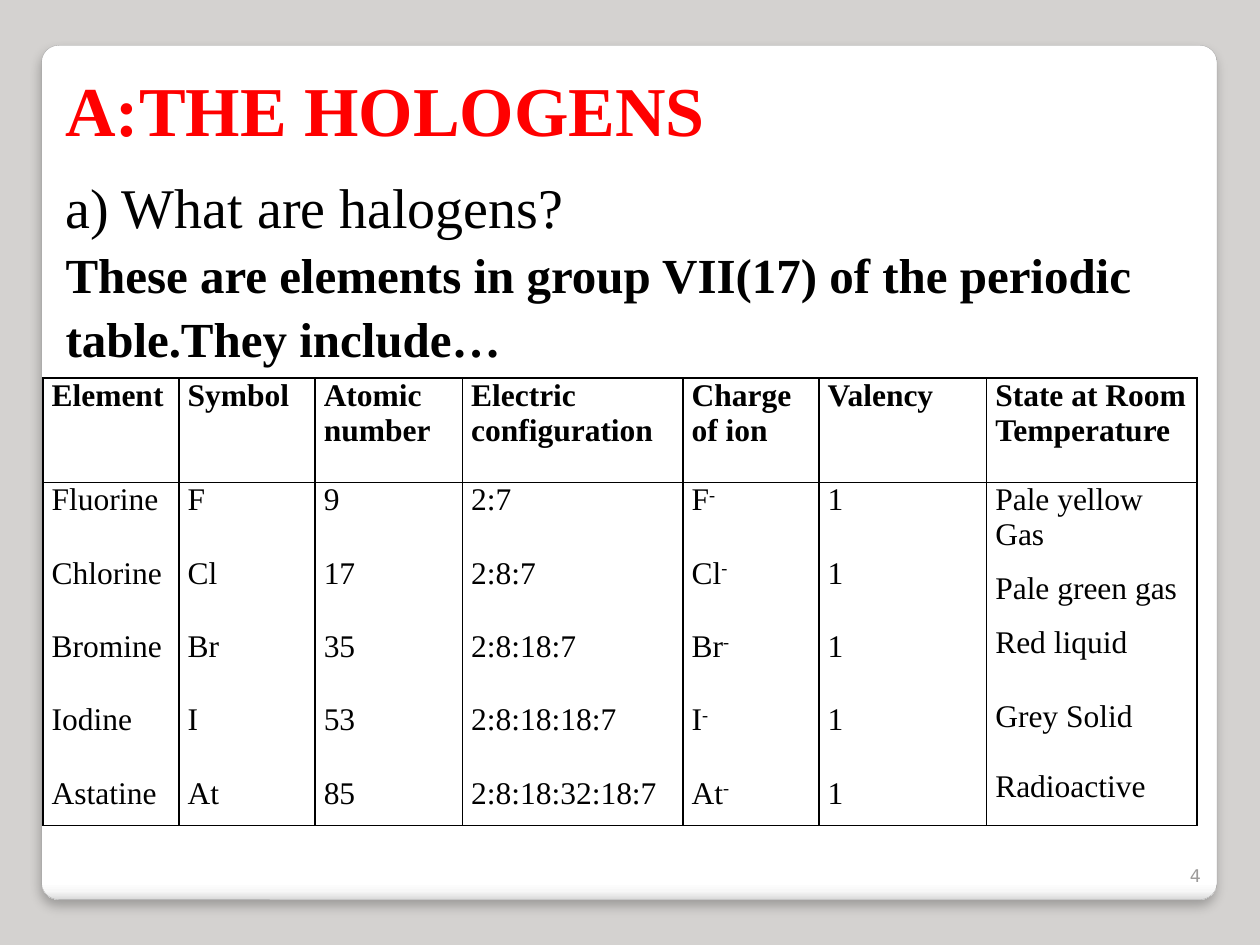
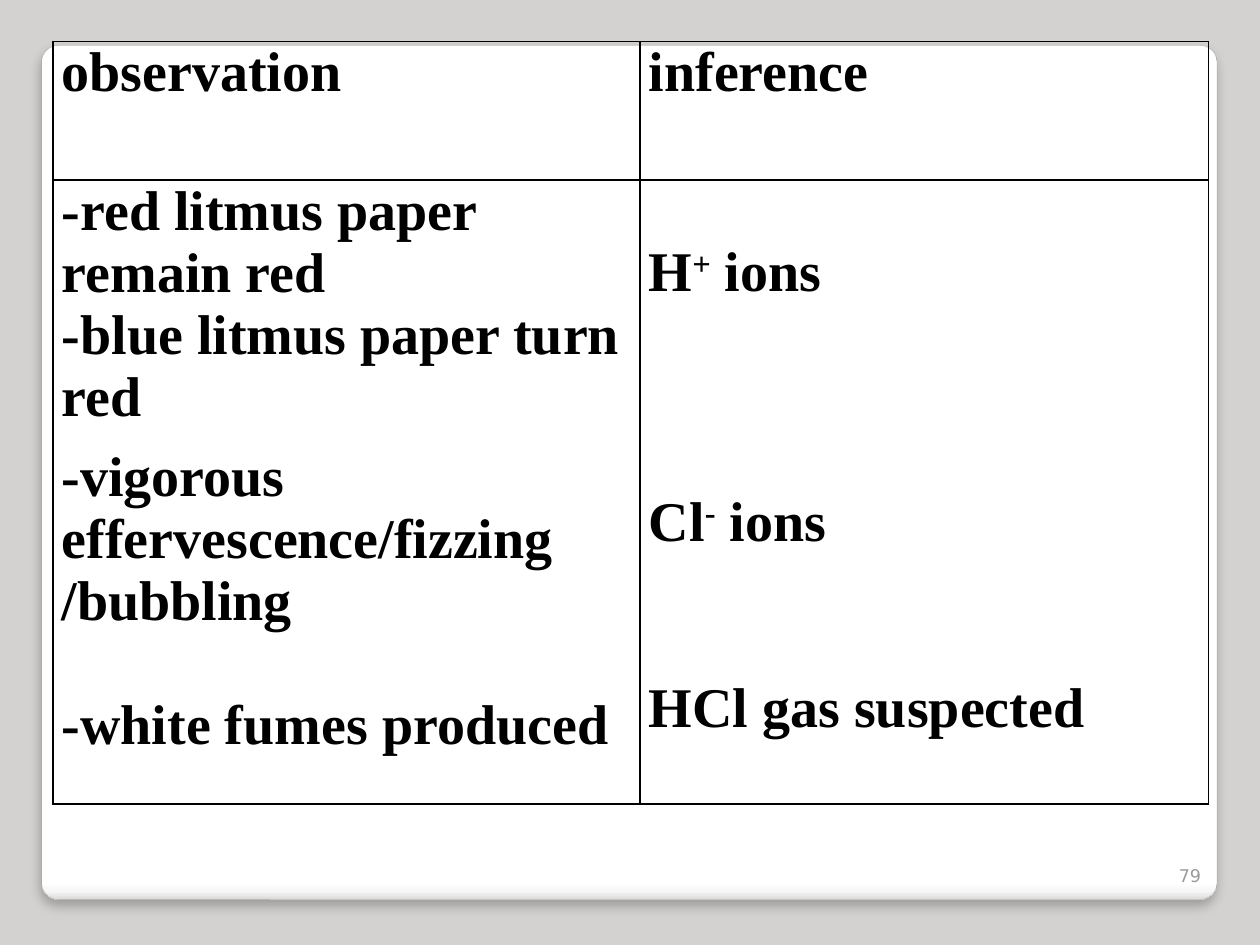
from lxml import etree
from pptx import Presentation
from pptx.dml.color import RGBColor
from pptx.enum.shapes import MSO_SHAPE
from pptx.enum.text import MSO_ANCHOR, MSO_AUTO_SIZE, PP_ALIGN
from pptx.oxml import parse_xml
from pptx.oxml.ns import nsdecls, qn
from pptx.util import Inches, Pt

ROUNDED = MSO_SHAPE.ROUNDED_RECTANGLE
TOP, BOTTOM = MSO_ANCHOR.TOP, MSO_ANCHOR.BOTTOM
LEFT, RIGHT = PP_ALIGN.LEFT, PP_ALIGN.RIGHT
NO_AUTOFIT = MSO_AUTO_SIZE.NONE
TITLE_AND_CONTENT, BLANK = 1, 6

SERIF, SANS = "Times New Roman", "DejaVu Sans"
BLACK, RED, GREY = "000000", "FF0000", "9D9B9A"
BACKDROP, CARD_EDGE = "D4D2D0", "A4A4A4"
CARD_STOPS = [(0, "FFFFFF"), (98, "FFFFFF"), (99, "F7F7F7"), (100, "DADADA")]
TITLE_SPACING = 1.09

# Text between carets is superscript. A paragraph is (text, points before it).
TITLE = "A:THE HOLOGENS"
INTRO = [
    ("a) What are halogens?", 32, False),
    ("These are elements in group VII(17) of the periodic table.They include…", 28, True),
]
HALOGEN_HEADS = ["Element", "Symbol", "Atomic number", "Electric configuration",
                 "Charge of ion", "Valency", "State at Room Temperature"]
HALOGENS = [
    ("Fluorine", "F", "9", "2:7", "F^-^", "1"),
    ("Chlorine", "Cl", "17", "2:8:7", "Cl^-^", "1"),
    ("Bromine", "Br", "35", "2:8:18:7", "Br^-^", "1"),
    ("Iodine", "I", "53", "2:8:18:18:7", "I^-^", "1"),
    ("Astatine", "At", "85", "2:8:18:32:18:7", "At^-^", "1"),
]
HALOGEN_GAP = 22
STATES = [("Pale yellow", 0), ("Gas", 0), ("Pale green gas", 11),
          ("Red liquid", 11), ("Grey Solid", 22), ("Radioactive", 20.5)]
TEST_HEADS = ["observation", "inference"]
OBSERVATIONS = [("-red litmus paper remain red", 0), ("-blue litmus paper turn red", 0),
                ("-vigorous effervescence/fizzing", 10), ("/bubbling", 0),
                ("-white fumes produced", 35)]
INFERENCES = [("H^+^ ions", 0), ("Cl^-^ ions", 107), ("HCl gas suspected", 71)]
INFERENCE_TOP = 0.49


def rgb(hex_colour):
    return RGBColor.from_string(hex_colour)


def box(*lengths):
    return [Inches(n) for n in lengths]


def add_run(p, text, size, bold=False, colour=BLACK, font=SERIF):
    r = p.add_run()
    r.text = text
    r.font.name, r.font.size, r.font.bold = font, Pt(size), bold
    r.font.color.rgb = rgb(colour)
    return r


def write_paragraphs(tf, paragraphs, size, bold):
    for i, (text, gap) in enumerate(paragraphs):
        p = tf.add_paragraph() if i else tf.paragraphs[0]
        if gap:
            p.space_before = Pt(gap)
        for j, part in enumerate(text.split("^")):
            if part:
                r = add_run(p, part, size, bold)
                if j % 2:
                    r.font._element.set("baseline", "30000")


def add_card(s):
    """Draw the white rounded panel, behind everything else on the slide."""
    sp = s.shapes.add_shape(ROUNDED, *box(0.33, 0.36, 9.33, 6.78))
    s.shapes._spTree.insert(2, sp._element)
    sp.adjustments[0] = 0.02
    sp.line.color.rgb = rgb(CARD_EDGE)
    sp.line.width = Pt(0.16)
    sp.fill.gradient()
    sp.fill.gradient_angle = 270
    stops = sp._element.spPr.find(qn("a:gradFill")).find(qn("a:gsLst"))
    for stop in list(stops):
        stops.remove(stop)
    for percent, colour in CARD_STOPS:
        stop = etree.SubElement(stops, qn("a:gs"), pos=str(percent * 1000))
        etree.SubElement(stop, qn("a:srgbClr"), val=colour)
    sp._element.spPr.append(parse_xml(
        f'<a:effectLst {nsdecls("a")}><a:outerShdw blurRad="{Pt(6)}" dist="{Pt(4)}" '
        'dir="5400000" algn="t" rotWithShape="0"><a:srgbClr val="000000">'
        '<a:alpha val="25000"/></a:srgbClr></a:outerShdw></a:effectLst>'))


def add_page_number(s, number):
    tf = s.shapes.add_textbox(*box(9.13, 6.68, 0.5, 0.4)).text_frame
    tf.word_wrap = True
    tf.vertical_anchor = BOTTOM
    p = tf.paragraphs[0]
    p.alignment = RIGHT
    add_run(p, str(number), 10, colour=GREY, font=SANS)


def new_slide(prs, layout, number):
    s = prs.slides.add_slide(prs.slide_layouts[layout])
    add_card(s)
    add_page_number(s, number)
    return s


def add_borders(cell):
    tcPr = cell._tc.get_or_add_tcPr()
    for i, side in enumerate(("lnL", "lnR", "lnT", "lnB")):
        tcPr.insert(i, parse_xml(
            f'<a:{side} {nsdecls("a")} w="{Pt(1)}"><a:solidFill>'
            f'<a:srgbClr val="{BLACK}"/></a:solidFill></a:{side}>'))


def add_ruled_table(s, left, top, widths, heights, heads, bodies, size, bold_body):
    """Add a heading row above one row whose cells each hold a list of paragraphs."""
    table = s.shapes.add_table(
        2, len(widths), *box(left, top, sum(widths), sum(heights))).table
    table.first_row = table.horz_banding = False
    for column, width in zip(table.columns, widths):
        column.width = Inches(width)
    rows = [[[(head, 0)] for head in heads], bodies]
    for i, contents in enumerate(rows):
        table.rows[i].height = Inches(heights[i])
        for j, paragraphs in enumerate(contents):
            cell = table.cell(i, j)
            cell.margin_left = cell.margin_right = Inches(0.07)
            cell.margin_top = cell.margin_bottom = 0
            cell.fill.background()
            add_borders(cell)
            write_paragraphs(cell.text_frame, paragraphs, size, bold_body or i == 0)
    return table


def prepare_placeholder(sp, *bounds):
    sp.left, sp.top, sp.width, sp.height = box(*bounds)
    tf = sp.text_frame
    tf.word_wrap = True
    tf.auto_size = NO_AUTOFIT
    tf.vertical_anchor = TOP
    return tf


def style_paragraph(p):
    p.alignment = LEFT
    p.line_spacing = TITLE_SPACING
    p.space_before = Pt(0)


def build_halogens(prs):
    s = new_slide(prs, TITLE_AND_CONTENT, 4)
    p = prepare_placeholder(s.shapes.title, 0.42, 0.42, 9.17, 0.8).paragraphs[0]
    style_paragraph(p)
    add_run(p, TITLE, 40, True, RED)

    tf = prepare_placeholder(s.placeholders[1], 0.42, 1.27, 9.17, 1.58)
    for i, (text, size, bold) in enumerate(INTRO):
        p = tf.add_paragraph() if i else tf.paragraphs[0]
        style_paragraph(p)
        pPr = p._p.get_or_add_pPr()
        pPr.set("marL", "0")
        pPr.set("indent", "0")
        etree.SubElement(pPr, qn("a:buNone"))
        add_run(p, text, size, bold)

    bodies = [[(text, HALOGEN_GAP if i else 0) for i, text in enumerate(column)]
              for column in zip(*HALOGENS)]
    add_ruled_table(s, 0.34, 3, [1.08, 1.08, 1.17, 1.75, 1.08, 1.33, 1.67],
                    [0.83, 2.51], HALOGEN_HEADS, bodies + [STATES], 18, False)


def build_gas_test(prs):
    s = new_slide(prs, BLANK, 79)
    table = add_ruled_table(s, 0.42, 0.33, [4.66, 4.51], [1.1, 4.95],
                            TEST_HEADS, [OBSERVATIONS, INFERENCES], 32, True)
    table.cell(1, 1).margin_top = Inches(INFERENCE_TOP)


def main():
    prs = Presentation()
    prs.slide_width, prs.slide_height = box(10, 7.5)
    fill = prs.slide_master.background.fill
    fill.solid()
    fill.fore_color.rgb = rgb(BACKDROP)
    build_halogens(prs)
    build_gas_test(prs)
    prs.save("out.pptx")


if __name__ == "__main__":
    main()
